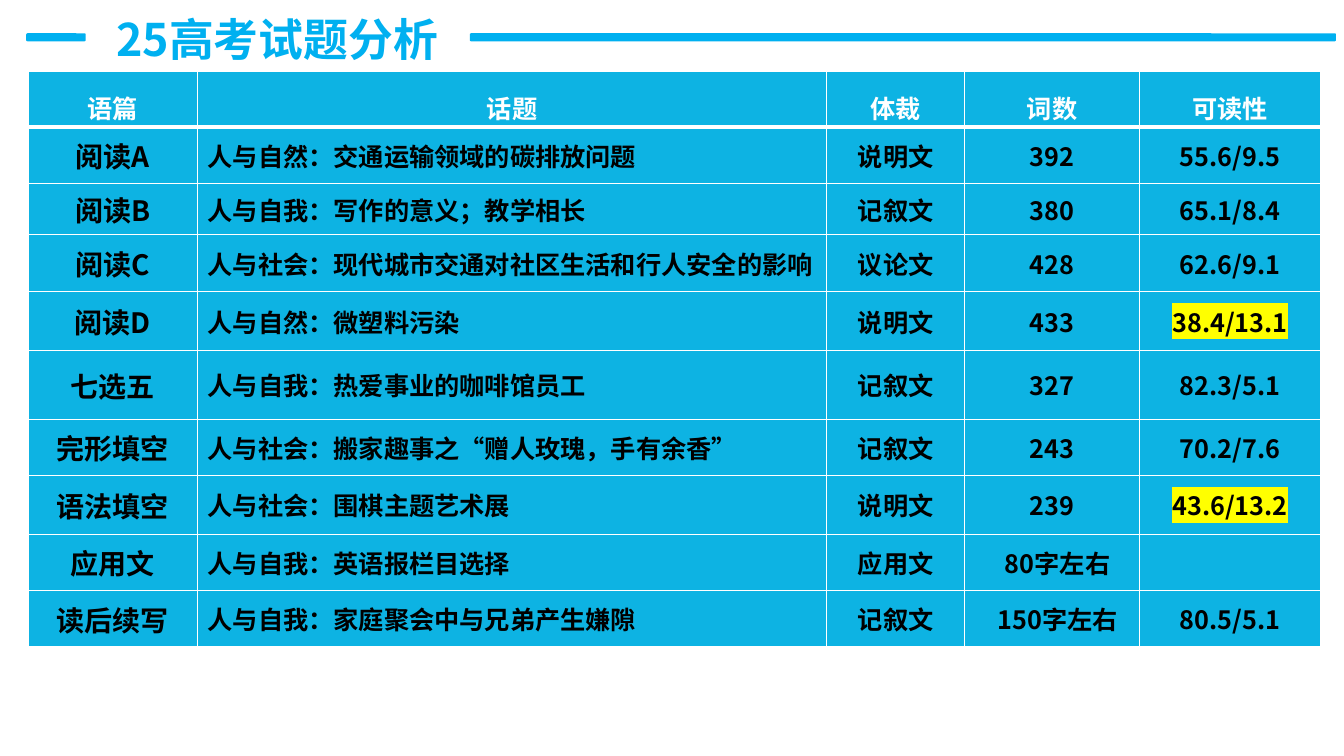
from dataclasses import dataclass

from lxml import etree
from pptx import Presentation
from pptx.dml.color import RGBColor
from pptx.enum import shapes, text
from pptx.oxml import ns
from pptx.util import Inches, Pt


@dataclass(frozen=True)
class Theme:
    blue: str = "00B0F0"
    cell: str = "0DB3E3"
    white: str = "FFFFFF"
    black: str = "000000"
    mark: str = "FFFF00"
    sans: str = "Noto Sans CJK SC"
    latin: str = "Calibri"
    title: int = 32
    label: int = 20
    body: int = 18


THEME = Theme()
ALIGN = text.PP_ALIGN
ANCHOR = text.MSO_ANCHOR

HEAD = ["语篇", "话题", "体裁", "词数", "可读性"]
ROWS = [
    ["阅读A", "人与自然：交通运输领域的碳排放问题", "说明文", "392", "55.6/9.5"],
    ["阅读B", "人与自我：写作的意义；教学相长", "记叙文", "380", "65.1/8.4"],
    ["阅读C", "人与社会：现代城市交通对社区生活和行人安全的影响", "议论文", "428", "62.6/9.1"],
    ["阅读D", "人与自然：微塑料污染", "说明文", "433", "38.4/13.1"],
    ["七选五", "人与自我：热爱事业的咖啡馆员工", "记叙文", "327", "82.3/5.1"],
    ["完形填空", "人与社会：搬家趣事之“赠人玫瑰，手有余香”", "记叙文", "243", "70.2/7.6"],
    ["语法填空", "人与社会：围棋主题艺术展", "说明文", "239", "43.6/13.2"],
    ["应用文", "人与自我：英语报栏目选择", "应用文", "80字左右", ""],
    ["读后续写", "人与自我：家庭聚会中与兄弟产生嫌隙", "记叙文", "150字左右", "80.5/5.1"],
]
HARD = {"38.4/13.1", "43.6/13.2"}
WIDTHS = [1.68, 6.24, 1.37, 1.73, 1.8]
HEIGHTS = [0.55, 0.56, 0.51, 0.56, 0.59, 0.68, 0.56, 0.58, 0.56, 0.56]


def apply(obj, **vals):
    """Set each named attribute of obj."""
    for name, val in vals.items():
        setattr(obj, name, val)


def add(parent, tag, **attrs):
    """Append a DrawingML element to parent."""
    return etree.SubElement(parent, ns.qn(f"a:{tag}"), **attrs)


def write(frame, words, size, color, font=THEME.sans, align=ALIGN.CENTER, mark=None):
    """Put one bold run in the frame and return its paragraph."""
    para = frame.paragraphs[0]
    para.alignment = align
    run = para.add_run()
    run.text = words
    run.font.color.rgb = RGBColor.from_string(color)
    props = run.font._element
    if mark:
        add(add(props, "highlight"), "srgbClr", val=mark)
    apply(run.font, size=Pt(size), bold=True, name=font)
    add(props, "ea", typeface=THEME.sans)
    return para


def style(cell, edges):
    """Draw the white edges, given as side and points, then fill the cell."""
    props = cell._tc.get_or_add_tcPr()
    for side, width in edges.items():
        line = add(props, f"ln{side}", w=str(Pt(width)))
        add(add(line, "solidFill"), "srgbClr", val=THEME.white)
    cell.fill.solid()
    cell.fill.fore_color.rgb = RGBColor.from_string(THEME.cell)


def head_cell(cell, words):
    style(cell, {"L": 1, "R": 1, "T": 1, "B": 3})
    cell.vertical_anchor = ANCHOR.BOTTOM
    para = write(cell.text_frame, words, THEME.body, THEME.white, THEME.latin)
    para.line_spacing = 0.5


def body_cell(cell, col, words):
    style(cell, {"L": 1, "R": 1, "B": 1})
    cell.vertical_anchor = ANCHOR.MIDDLE
    if words.endswith("字左右"):
        cell.margin_left = Inches(0.21)
    if words:
        write(cell.text_frame, words,
              THEME.label if col == 0 else THEME.body, THEME.black,
              align=ALIGN.LEFT if col == 1 else ALIGN.CENTER,
              mark=THEME.mark if words in HARD else None)


def grid(slide, left, top):
    """Add the exam table with its corner at left, top."""
    box = (left, top, sum(WIDTHS), sum(HEIGHTS))
    table = slide.shapes.add_table(
        len(HEIGHTS), len(WIDTHS), *map(Inches, box)).table
    table.horz_banding = False
    for col, width in zip(table.columns, WIDTHS):
        col.width = Inches(width)
    for row, height in zip(table.rows, HEIGHTS):
        row.height = Inches(height)
    for col, words in enumerate(HEAD):
        head_cell(table.cell(0, col), words)
    for row, items in enumerate(ROWS, 1):
        for col, words in enumerate(items):
            body_cell(table.cell(row, col), col, words)


def banner(slide, left, top, width, height):
    """Place the title in the box, with a bar on either side of its words."""
    for start, span in ((4.33, 8.59), (-0.07, 0.59)):
        bar = slide.shapes.add_shape(
            shapes.MSO_SHAPE.ROUNDED_RECTANGLE,
            *map(Inches, (left + start, top + 0.26, span, 0.08)))
        bar.shadow.inherit = False
        bar.fill.solid()
        bar.fill.fore_color.rgb = RGBColor.from_string(THEME.blue)
        bar.line.fill.background()
    title = slide.shapes.title
    apply(title, left=Inches(left), top=Inches(top),
          width=Inches(width), height=Inches(height))
    apply(title.text_frame, word_wrap=True, auto_size=text.MSO_AUTO_SIZE.NONE,
          vertical_anchor=ANCHOR.TOP)
    write(title.text_frame, "25高考试题分析", THEME.title, THEME.blue)


def main():
    deck = Presentation()
    apply(deck, slide_width=Inches(13.33), slide_height=Inches(7.5))
    slide = deck.slides.add_slide(deck.slide_layouts[5])
    grid(slide, 0.28, 0.71)
    banner(slide, 0.33, 0.07, 4.84, 0.64)
    deck.save("out.pptx")


if __name__ == "__main__":
    main()
